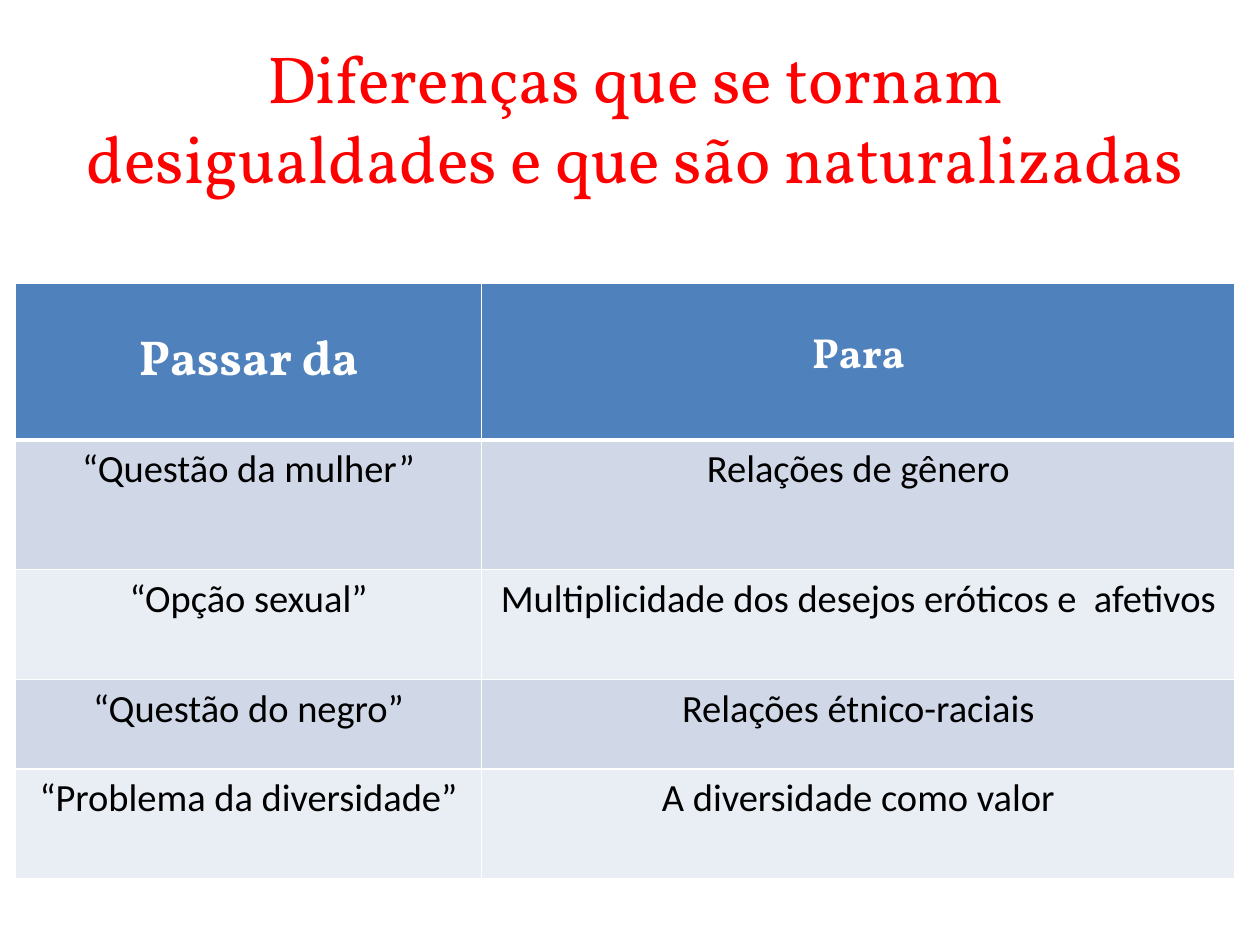
import pptx
import pptx.dml.color
import pptx.enum.text
import pptx.oxml
import pptx.oxml.ns
import pptx.util
from pptx.util import Cm

ROWS = [
    ("Passar da", "Para"),
    ("“Questão da mulher”", "Relações de gênero"),
    ("“Opção sexual”", "Multiplicidade dos desejos eróticos e  afetivos"),
    ("“Questão do negro”", "Relações étnico-raciais"),
    ("“Problema da diversidade”", "A diversidade como valor"),
]
COLUMN_SHARES = (3.7, 5.98)
ROW_SHARES = (1.24, 1.03, 0.87, 0.71, 0.87)
HEADER_SIZES = (28, 24)
HEADER_FILL = "4F81BD"
BAND_FILLS = ("D0D8E8", "E9EDF4")


def color(value):
    return pptx.dml.color.RGBColor.from_string(value)


def write(frame, text, size, font, ink, bold=False):
    frame.text = text
    para = frame.paragraphs[0]
    para.alignment = pptx.enum.text.PP_ALIGN.CENTER
    para.font.size = pptx.util.Pt(size)
    para.font.name = font
    para.font.bold = bold
    para.font.color.rgb = color(ink)


def add_borders(cell, bottom_width):
    properties = cell._tc.get_or_add_tcPr()
    widths = {"lnL": 1, "lnR": 1, "lnT": 1, "lnB": bottom_width}
    for position, (side, width) in enumerate(widths.items()):
        line = pptx.oxml.parse_xml(
            f'<a:{side} {pptx.oxml.ns.nsdecls("a")} w="{pptx.util.Pt(width)}">'
            '<a:solidFill><a:srgbClr val="FFFFFF"/></a:solidFill>'
            f'</a:{side}>'
        )
        properties.insert(position, line)


def add_title(page, left, top, width, height):
    box = page.shapes.add_textbox(left, top, width, height)
    frame = box.text_frame
    frame.word_wrap = True
    frame.vertical_anchor = pptx.enum.text.MSO_ANCHOR.MIDDLE
    text = "Diferenças que se tornam\vdesigualdades e que são naturalizadas"
    write(frame, text, 38, "Vollkorn", "FF0000")


def add_comparison(page, left, top, width, height):
    table = page.shapes.add_table(
        len(ROWS), len(COLUMN_SHARES), left, top, width, height
    ).table
    for column, share in zip(table.columns, COLUMN_SHARES):
        column.width = int(width * share / sum(COLUMN_SHARES))
    for row, share in zip(table.rows, ROW_SHARES):
        row.height = int(height * share / sum(ROW_SHARES))
    for row_index, texts in enumerate(ROWS):
        is_header = row_index == 0
        fill = HEADER_FILL if is_header else BAND_FILLS[(row_index - 1) % 2]
        for column_index, text in enumerate(texts):
            cell = table.cell(row_index, column_index)
            cell.fill.solid()
            cell.fill.fore_color.rgb = color(fill)
            if is_header:
                cell.margin_top = Cm(0.91)
                size = HEADER_SIZES[column_index]
                write(cell.text_frame, text, size, "Vollkorn", "FFFFFF", True)
            else:
                write(cell.text_frame, text, 22, "Calibri", "000000")
            add_borders(cell, 3 if is_header else 1)


def main():
    deck = pptx.Presentation()
    deck.slide_width = Cm(25.4)
    deck.slide_height = Cm(19.05)
    page = deck.slides.add_slide(deck.slide_layouts[6])
    add_title(page, Cm(0.71), Cm(0.76), Cm(24.2), Cm(3.18))
    add_comparison(page, Cm(0.31), Cm(5.72), Cm(24.59), Cm(11.99))
    deck.save("out.pptx")


if __name__ == "__main__":
    main()
